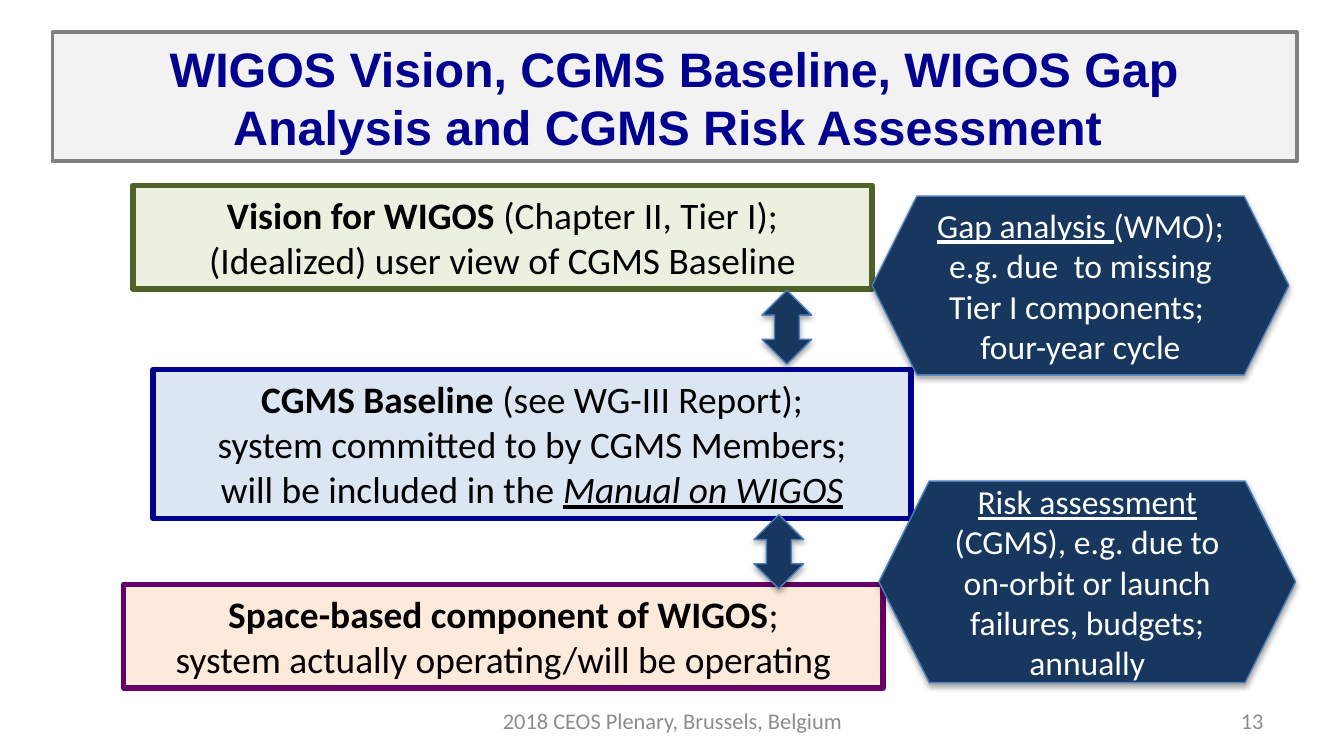
import dataclasses

import lxml.etree
import pptx
import pptx.dml.color
import pptx.enum.shapes
import pptx.enum.text
import pptx.oxml
import pptx.oxml.ns
import pptx.util

Inches = pptx.util.Inches
Pt = pptx.util.Pt
RGBColor = pptx.dml.color.RGBColor
MSO_SHAPE = pptx.enum.shapes.MSO_SHAPE
PP_ALIGN = pptx.enum.text.PP_ALIGN
MSO_ANCHOR = pptx.enum.text.MSO_ANCHOR

NAVY = RGBColor(0x00, 0x00, 0x90)
DEEP_BLUE = RGBColor(0x17, 0x37, 0x5E)
EDGE_BLUE = RGBColor(0x4B, 0x7E, 0xBC)
LIGHT_GRAY = RGBColor(0xF2, 0xF2, 0xF2)
MID_GRAY = RGBColor(0x80, 0x80, 0x80)
FOOTER_GRAY = RGBColor(0x8C, 0x8C, 0x8C)
PALE_GREEN = RGBColor(0xEB, 0xF1, 0xDE)
GREEN = RGBColor(0x4F, 0x62, 0x28)
PALE_BLUE = RGBColor(0xDC, 0xE6, 0xF2)
PALE_ORANGE = RGBColor(0xFD, 0xEA, 0xDA)
PURPLE = RGBColor(0x66, 0x00, 0x66)
BLACK = RGBColor(0, 0, 0)
WHITE = RGBColor(0xFF, 0xFF, 0xFF)


@dataclasses.dataclass
class Run:
    text: str
    bold: bool = False
    italic: bool = False
    underline: bool = False


Paragraphs = list[list[Run]]
Box = tuple[float, float, float, float]


@dataclasses.dataclass
class Level:
    box: Box
    fill: RGBColor
    line: RGBColor
    paragraphs: Paragraphs


@dataclasses.dataclass
class Callout:
    box: Box
    paragraphs: Paragraphs


LEVELS = [
    Level((0.99, 1.38, 5.5, 0.77), PALE_GREEN, GREEN, [
        [Run("Vision for WIGOS", bold=True), Run(" (Chapter II, Tier I);")],
        [Run("(Idealized) user view of CGMS Baseline")],
    ]),
    Level((1.14, 2.75, 5.64, 1.11), PALE_BLUE, NAVY, [
        [Run("CGMS Baseline ", bold=True), Run("(see WG-III Report);")],
        [Run("system committed to by CGMS Members;")],
        [Run("will be included in the "),
         Run("Manual on WIGOS", italic=True, underline=True)],
    ]),
    Level((0.92, 4.35, 5.65, 0.77), PALE_ORANGE, PURPLE, [
        [Run("Space-based component of WIGOS", bold=True), Run(";")],
        [Run("system actually operating/will be operating")],
    ]),
]
CALLOUTS = [
    Callout((6.49, 1.46, 3.1, 1.33), [
        [Run("Gap analysis ", underline=True),
         Run("(WMO); e.g. due  to missing Tier I components; ")],
        [Run("four-year cycle")],
    ]),
    Callout((6.54, 3.58, 3.1, 1.5), [
        [Run("Risk assessment ", underline=True),
         Run("(CGMS), e.g. due to on-orbit or launch failures, budgets; annually")],
    ]),
]
ARROWS = [(5.67, 2.16, 0.37, 0.55), (5.61, 3.83, 0.37, 0.55)]


def write_text(sp, paragraphs: Paragraphs, *, size: float, color: RGBColor,
               font: str = "Calibri", align=PP_ALIGN.CENTER,
               anchor=MSO_ANCHOR.MIDDLE) -> None:
    tf = sp.text_frame
    tf.word_wrap = True
    tf.auto_size = pptx.enum.text.MSO_AUTO_SIZE.NONE
    tf.vertical_anchor = anchor
    for i, runs in enumerate(paragraphs):
        p = tf.add_paragraph() if i else tf.paragraphs[0]
        p.alignment = align
        for run in runs:
            r = p.add_run()
            r.text = run.text
            r.font.name = font
            r.font.size = Pt(size)
            r.font.color.rgb = color
            r.font.bold = run.bold
            r.font.italic = run.italic
            r.font.underline = run.underline


def paint(sp, fill: RGBColor, line: RGBColor, width: float) -> None:
    sp.fill.solid()
    sp.fill.fore_color.rgb = fill
    sp.line.color.rgb = line
    sp.line.width = Pt(width)


def add_shape(s, kind, box: Box, fill: RGBColor, line: RGBColor, width: float):
    sp = s.shapes.add_shape(kind, *map(Inches, box))
    sp.shadow.inherit = False
    paint(sp, fill, line, width)
    return sp


def add_shadowed_shape(s, kind, box: Box):
    """Add a deep blue shape with a soft shadow straight below it."""
    sp = add_shape(s, kind, box, DEEP_BLUE, EDGE_BLUE, 0.75)
    qn = pptx.oxml.ns.qn
    effects = sp._element.spPr.find(qn("a:effectLst"))
    shadow = lxml.etree.SubElement(
        effects, qn("a:outerShdw"), blurRad=str(Pt(3.1)), dist=str(Pt(1.8)),
        dir="5400000", rotWithShape="0")
    color = lxml.etree.SubElement(shadow, qn("a:srgbClr"), val="000000")
    lxml.etree.SubElement(color, qn("a:alpha"), val="35000")
    return sp


def add_title(s, text: str) -> None:
    title = s.shapes.title
    title.left, title.top, title.width, title.height = map(
        Inches, (0.39, 0.24, 9.26, 0.96))
    paint(title, LIGHT_GRAY, MID_GRAY, 2)
    write_text(title, [[Run(text, bold=True)]], size=25.9, color=NAVY,
               font="Arial")


def add_footer(s, text: str, left: float, width: float, align) -> None:
    sp = s.shapes.add_textbox(*map(Inches, (left, 5.21, width, 0.3)))
    write_text(sp, [[Run(text)]], size=12, color=FOOTER_GRAY, align=align)


def main() -> None:
    prs = pptx.Presentation()
    prs.slide_width = Inches(10)
    prs.slide_height = Inches(10 * 9 / 16)
    s = prs.slides.add_slide(prs.slide_layouts[5])

    add_title(s, "WIGOS Vision, CGMS Baseline, WIGOS Gap Analysis "
                 "and CGMS Risk Assessment ")
    for level in LEVELS:
        sp = add_shape(s, MSO_SHAPE.RECTANGLE, level.box, level.fill, level.line, 3)
        write_text(sp, level.paragraphs, size=20, color=BLACK,
                   anchor=MSO_ANCHOR.TOP)
    for callout in CALLOUTS:
        sp = add_shadowed_shape(s, MSO_SHAPE.HEXAGON, callout.box)
        write_text(sp, callout.paragraphs, size=18, color=WHITE)
    for box in ARROWS:
        add_shadowed_shape(s, MSO_SHAPE.UP_DOWN_ARROW, box)
    add_footer(s, "2018 CEOS Plenary, Brussels, Belgium", 3.42, 3.17,
               PP_ALIGN.CENTER)
    add_footer(s, "13", 7.17, 2.33, PP_ALIGN.RIGHT)

    prs.save("out.pptx")


if __name__ == "__main__":
    main()
